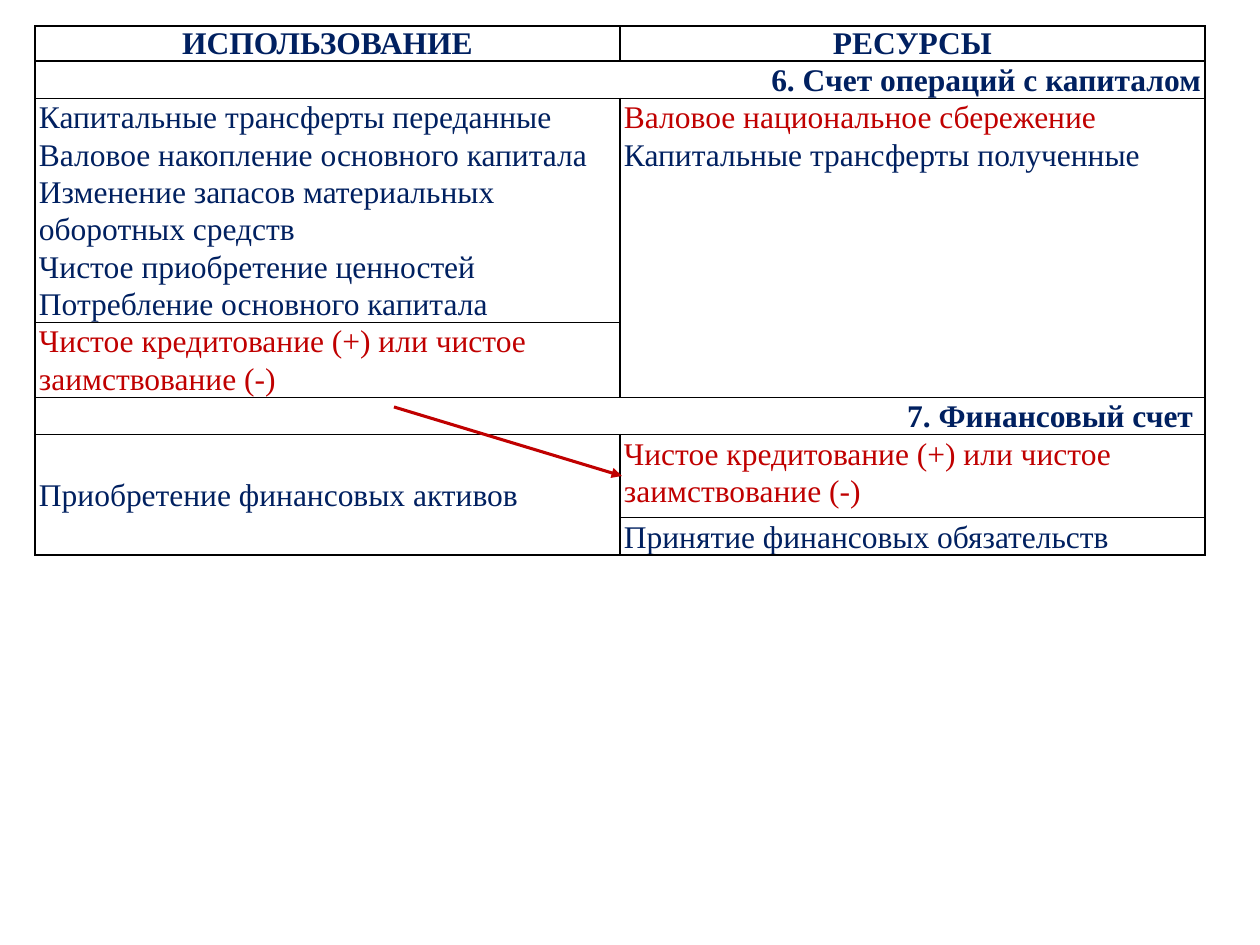
from dataclasses import dataclass

from lxml import etree
from pptx import Presentation
from pptx.dml.color import RGBColor
from pptx.enum import shapes, text
from pptx.oxml import ns
from pptx.util import Emu, Pt

NAVY = RGBColor(0x00, 0x20, 0x60)
RED = RGBColor(0xC0, 0x00, 0x00)
BLACK = RGBColor(0x00, 0x00, 0x00)
FONT = "Times New Roman"
PX_PER_INCH = 126
COLUMN_WIDTH = 585
ROW_HEIGHTS = [35, 37, 224, 75, 37, 83, 37]
LEFT, CENTER, RIGHT = text.PP_ALIGN.LEFT, text.PP_ALIGN.CENTER, text.PP_ALIGN.RIGHT
TOP, MIDDLE = text.MSO_ANCHOR.TOP, text.MSO_ANCHOR.MIDDLE
NET_LENDING = "Чистое кредитование (+) или чистое заимствование (-)"


@dataclass(frozen=True)
class Entry:
    row: int
    column: int
    lines: tuple[str, ...]
    colors: tuple[RGBColor, ...] = (NAVY,)
    align: text.PP_ALIGN = LEFT
    bold: bool = False
    spacing: float = 1.07
    rows: int = 1
    columns: int = 1
    anchor: text.MSO_ANCHOR = TOP


ENTRIES = [
    Entry(0, 0, ("ИСПОЛЬЗОВАНИЕ",), align=CENTER, bold=True, spacing=1.0),
    Entry(0, 1, ("РЕСУРСЫ",), align=CENTER, bold=True, spacing=1.0),
    Entry(1, 0, ("6. Счет операций с капиталом",), align=RIGHT, bold=True, columns=2),
    Entry(2, 0, (
        "Капитальные трансферты переданные",
        "Валовое накопление основного капитала",
        "Изменение запасов материальных оборотных средств",
        "Чистое приобретение ценностей",
        "Потребление основного капитала",
    )),
    Entry(2, 1, ("Валовое национальное сбережение", "Капитальные трансферты полученные"),
          colors=(RED, NAVY), rows=2),
    Entry(3, 0, (NET_LENDING,), colors=(RED,)),
    Entry(4, 0, ("7. Финансовый счет ",), align=RIGHT, bold=True, columns=2),
    Entry(5, 0, ("Приобретение финансовых активов",), rows=2, anchor=MIDDLE),
    Entry(5, 1, (NET_LENDING,), colors=(RED,)),
    Entry(6, 1, ("Принятие финансовых обязательств",)),
]


def px(length: int) -> Emu:
    return Emu(round(length * 914400 / PX_PER_INCH))


def format_cell(cell) -> None:
    properties = cell._tc.get_or_add_tcPr()
    for side in ("lnL", "lnR", "lnT", "lnB"):
        border = etree.SubElement(properties, ns.qn(f"a:{side}"), w=str(Pt(1)))
        fill = etree.SubElement(border, ns.qn("a:solidFill"))
        etree.SubElement(fill, ns.qn("a:srgbClr"), val=str(BLACK))
    cell.fill.background()
    cell.margin_left = cell.margin_right = px(4)
    cell.margin_top = cell.margin_bottom = 0


def write_entry(accounts, entry: Entry) -> None:
    cell = accounts.cell(entry.row, entry.column)
    if entry.rows > 1 or entry.columns > 1:
        cell.merge(accounts.cell(entry.row + entry.rows - 1,
                                 entry.column + entry.columns - 1))
    cell.vertical_anchor = entry.anchor
    paragraph = cell.text_frame.paragraphs[0]
    paragraph.text = "\v".join(entry.lines)
    paragraph.alignment = entry.align
    paragraph.line_spacing = entry.spacing
    for index, run in enumerate(paragraph.runs):
        run.font.name = FONT
        run.font.size = Pt(18)
        run.font.bold = entry.bold
        run.font.color.rgb = entry.colors[index % len(entry.colors)]


def add_accounts(slide) -> None:
    accounts = slide.shapes.add_table(
        len(ROW_HEIGHTS), 2, px(35), px(26), px(2 * COLUMN_WIDTH), px(sum(ROW_HEIGHTS))
    ).table
    accounts.first_row = accounts.horz_banding = False
    for column in accounts.columns:
        column.width = px(COLUMN_WIDTH)
    for row, height in zip(accounts.rows, ROW_HEIGHTS):
        row.height = px(height)
    for cell in accounts.iter_cells():
        format_cell(cell)
    for entry in ENTRIES:
        write_entry(accounts, entry)


def add_balance_arrow(slide) -> None:
    arrow = slide.shapes.add_connector(
        shapes.MSO_CONNECTOR.STRAIGHT, px(394), px(407), px(622), px(476))
    arrow.line.color.rgb = RED
    arrow.line.width = Pt(1.75)
    etree.SubElement(arrow.line._get_or_add_ln(), ns.qn("a:tailEnd"), type="triangle")
    etree.SubElement(arrow._element.spPr, ns.qn("a:effectLst"))


def main() -> None:
    presentation = Presentation()
    presentation.slide_width = px(1260)
    presentation.slide_height = px(945)
    slide = presentation.slides.add_slide(presentation.slide_layouts[6])
    add_accounts(slide)
    add_balance_arrow(slide)
    presentation.save("out.pptx")


if __name__ == "__main__":
    main()
